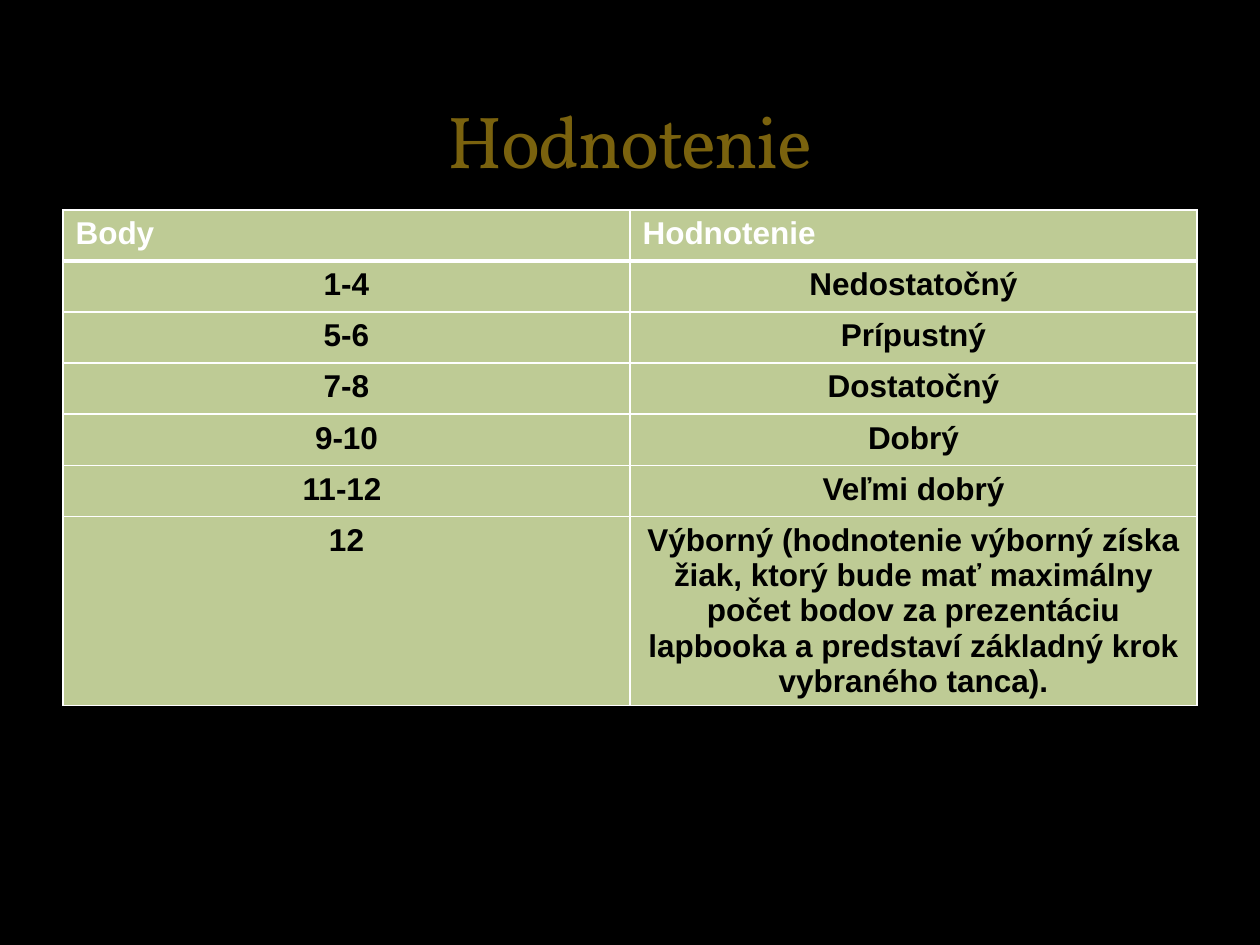
from lxml.etree import SubElement
from pptx import Presentation
from pptx.dml.color import RGBColor
from pptx.enum.text import MSO_ANCHOR, PP_ALIGN
from pptx.oxml.ns import qn
from pptx.util import Cm, Pt


def color(hex_value):
    return RGBColor.from_string(hex_value)


def add_border(cell, side, points):
    line = SubElement(cell._tc.get_or_add_tcPr(), qn(f"a:{side}"), w=str(Pt(points)))
    fill = SubElement(line, qn("a:solidFill"))
    SubElement(fill, qn("a:srgbClr"), val="FFFFFF")


prs = Presentation()
prs.slide_width, prs.slide_height = Cm(25.4), Cm(19.05)
slide = prs.slides.add_slide(prs.slide_layouts[6])
slide.background.fill.solid()
slide.background.fill.fore_color.rgb = color("000000")

# Grading table
grades = [
    ("Body", "Hodnotenie"),
    ("1-4", "Nedostatočný"),
    ("5-6", "Prípustný"),
    ("7-8", "Dostatočný"),
    ("9-10", "Dobrý"),
    ("11-12 ", "Veľmi dobrý"),
    ("12", "Výborný (hodnotenie výborný získa žiak, ktorý bude mať maximálny "
           "počet bodov za prezentáciu lapbooka a predstaví základný krok "
           "vybraného tanca)."),
]
row_height = Cm(1.03)
grading = slide.shapes.add_table(len(grades), 2, Cm(1.27), Cm(4.23),
                                 Cm(22.86), row_height * len(grades)).table
for r, grade in enumerate(grades):
    is_header = r == 0
    for c, wording in enumerate(grade):
        cell = grading.cell(r, c)
        cell.text_frame.text = wording
        paragraph = cell.text_frame.paragraphs[0]
        paragraph.alignment = PP_ALIGN.LEFT if is_header else PP_ALIGN.CENTER
        font = paragraph.runs[0].font
        font.name, font.size, font.bold = "Arial", Pt(18), True
        font.color.rgb = color("FFFFFF" if is_header else "000000")
        # Borders come before the fill in the cell properties
        for side in ("lnL", "lnR", "lnT", "lnB"):
            under_header = (r, side) in ((0, "lnB"), (1, "lnT"))
            add_border(cell, side, 3 if under_header else 1)
        cell.fill.solid()
        cell.fill.fore_color.rgb = color("BECB95")

# Title
title = slide.shapes.add_textbox(Cm(1.27), Cm(0.43), Cm(22.86), Cm(3.38)).text_frame
title.word_wrap = True
title.vertical_anchor = MSO_ANCHOR.BOTTOM
title.text = "Hodnotenie"
heading = title.paragraphs[0]
heading.alignment = PP_ALIGN.CENTER
heading_font = heading.runs[0].font
heading_font.name, heading_font.size = "Vollkorn", Pt(42)
heading_font.color.rgb = color("7A620E")
heading.runs[0]._r.get_or_add_rPr().set("spc", "-100")

prs.save("out.pptx")
